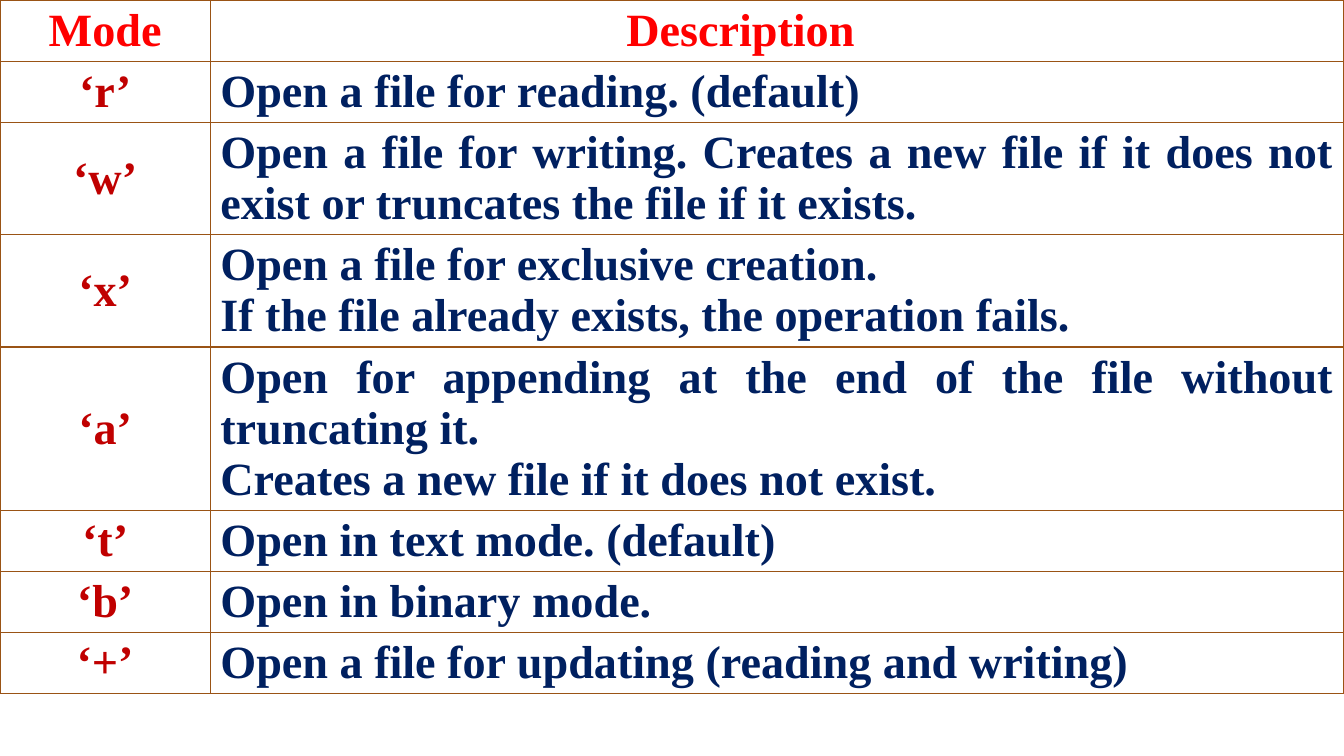
from dataclasses import dataclass

from lxml import etree
from pptx import Presentation
from pptx import util as u
from pptx.dml.color import RGBColor
from pptx.enum import text
from pptx.oxml import ns


@dataclass(frozen=True)
class Theme:
    font: str = "Times New Roman"
    size: int = 33
    heading: str = "FF0000"
    mode: str = "C00000"
    description: str = "002060"
    border: str = "9A5315"
    border_width: float = 1


THEME = Theme()
SLIDE_WIDTH, SLIDE_HEIGHT = 33.87, 19.05
MODE_WIDTH = 5.3
LINE_HEIGHT, ROW_PADDING = 1.28, 0.25
HEADING_INSET = 2.1

# Mode, description paragraphs, lines of text in the row
FILE_MODES = [
    ("‘r’", ["Open a file for reading. (default)"], 1),
    ("‘w’", ["Open a file for writing. Creates a new file if it does not "
             "exist or truncates the file if it exists."], 2),
    ("‘x’", ["Open a file for exclusive creation.",
             "If the file already exists, the operation fails."], 2),
    ("‘a’", ["Open for appending at the end of the file without truncating it.",
             "Creates a new file if it does not exist."], 3),
    ("‘t’", ["Open in text mode. (default)"], 1),
    ("‘b’", ["Open in binary mode."], 1),
    ("‘+’", ["Open a file for updating (reading and writing)"], 1),
]


def write(frame, paragraphs, *, color, align=text.PP_ALIGN.CENTER):
    for index, words in enumerate(paragraphs):
        paragraph = frame.paragraphs[0] if index == 0 else frame.add_paragraph()
        paragraph.alignment = align
        run = paragraph.add_run()
        run.text = words
        run.font.name = THEME.font
        run.font.size = u.Pt(THEME.size)
        run.font.bold = True
        run.font.color.rgb = RGBColor.from_string(color)


def outline(cell):
    """Clear the fill and draw all four borders, which precede the fill in XML."""
    cell.fill.background()
    properties = cell._tc.get_or_add_tcPr()
    for position, side in enumerate(("lnL", "lnR", "lnT", "lnB")):
        line = etree.Element(ns.qn(f"a:{side}"), w=str(u.Pt(THEME.border_width)))
        fill = etree.SubElement(line, ns.qn("a:solidFill"))
        etree.SubElement(fill, ns.qn("a:srgbClr"), val=THEME.border)
        properties.insert(position, line)


def add_mode_table(slide, left, top, width):
    line_counts = [1] + [lines for _, _, lines in FILE_MODES]
    heights = [lines * LINE_HEIGHT + ROW_PADDING for lines in line_counts]
    table = slide.shapes.add_table(
        len(heights), 2, u.Cm(left), u.Cm(top), u.Cm(width), u.Cm(sum(heights))
    ).table
    table.horz_banding = False
    table.columns[0].width = u.Cm(MODE_WIDTH)
    table.columns[1].width = u.Cm(width - MODE_WIDTH)
    for row, height in zip(table.rows, heights):
        row.height = u.Cm(height)
    for cell in table.iter_cells():
        cell.vertical_anchor = text.MSO_ANCHOR.MIDDLE
        outline(cell)

    for column, heading in enumerate(("Mode", "Description")):
        write(table.cell(0, column).text_frame, [heading], color=THEME.heading)
    table.cell(0, 1).margin_right = u.Cm(HEADING_INSET)
    for row, (mode, description, _) in enumerate(FILE_MODES, start=1):
        write(table.cell(row, 0).text_frame, [mode], color=THEME.mode)
        write(table.cell(row, 1).text_frame, description,
              color=THEME.description, align=text.PP_ALIGN.JUSTIFY)


def main():
    deck = Presentation()
    deck.slide_width = u.Cm(SLIDE_WIDTH)
    deck.slide_height = u.Cm(SLIDE_HEIGHT)
    slide = deck.slides.add_slide(deck.slide_layouts[6])
    add_mode_table(slide, 0, 0, SLIDE_WIDTH)
    deck.save("out.pptx")


if __name__ == "__main__":
    main()
